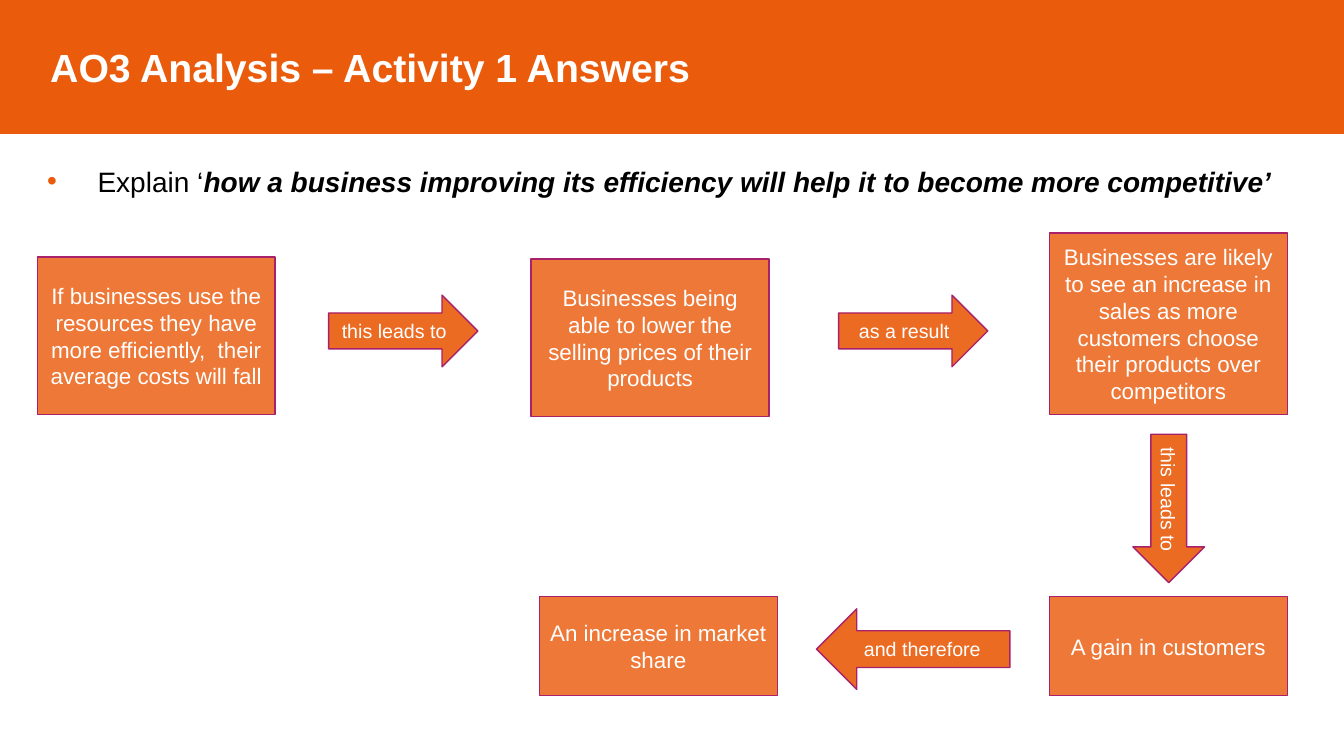
from dataclasses import dataclass

from lxml.etree import SubElement
from pptx import Presentation
from pptx.dml.color import RGBColor
from pptx.enum.shapes import MSO_SHAPE
from pptx.enum.text import MSO_ANCHOR, PP_ALIGN
from pptx.oxml.ns import qn
from pptx.util import Pt

TITLE = "AO3 Analysis – Activity 1 Answers"
QUESTION = [
    ("Explain ‘", False),
    ("how a business improving its efficiency will help it to become more competitive’", True),
]
# text, left, top, height
STEPS = [
    ("If businesses use the resources they have more efficiently,  their average costs will fall",
     26.6, 183.6, 112.4),
    ("Businesses being able to lower the selling prices of their products", 379.4, 185, 112.4),
    ("Businesses are likely to see an increase in sales as more customers choose "
     "their products over competitors", 749.5, 166.4, 129.6),
    ("A gain in customers", 749.5, 426.2, 70.6),
    ("An increase in market share", 385.2, 426.2, 70.6),
]
# text, preset, centre x, centre y, width, height, rotation, adjustments
LINKS = [
    ("this leads to", MSO_SHAPE.RIGHT_ARROW, 288, 236.4, 106.6, 51.2, 0, ()),
    ("as a result", MSO_SHAPE.RIGHT_ARROW, 652.3, 236.4, 106.6, 51.2, 0, ()),
    ("this leads to", MSO_SHAPE.RIGHT_ARROW, 834.8, 363.2, 106, 51.2, 90, ()),
    ("and therefore", MSO_SHAPE.LEFT_ARROW, 652.3, 463.7, 138.2, 57.6, 0, (0.455, 0.5)),
]


@dataclass(frozen=True)
class Theme:
    font: str = "Arial"
    orange: str = "EA5B0C"
    outline: str = "A8216B"
    white: str = "FFFFFF"
    black: str = "000000"
    title_size: int = 28
    question_size: int = 20
    step_size: int = 16
    link_size: int = 14
    step_opacity: int = 82
    link_opacity: int = 90


THEME = Theme()
SLIDE_WIDTH, SLIDE_HEIGHT = 960, 540
STEP_WIDTH = 170


def add_run(paragraph, text, size, color, bold=False, italic=False):
    run = paragraph.add_run()
    run.text = text
    font = run.font
    font.name, font.size = THEME.font, Pt(size)
    font.bold, font.italic = bold, italic
    font.color.rgb = RGBColor.from_string(color)


def set_indent(paragraph, margin, first_line=0):
    properties = paragraph._p.get_or_add_pPr()
    properties.set("marL", str(Pt(margin)))
    properties.set("indent", str(Pt(first_line)))
    return properties


def add_block(slide, preset, box, text, size, line, opacity=100, bold=False,
              align=PP_ALIGN.CENTER):
    """Add an orange shape with one white, vertically centred paragraph."""
    block = slide.shapes.add_shape(preset, *(Pt(length) for length in box))
    block.shadow.inherit = False
    block.fill.solid()
    block.fill.fore_color.rgb = RGBColor.from_string(THEME.orange)
    if opacity < 100:
        color = block.fill._xPr.find(qn("a:solidFill"))[0]
        SubElement(color, qn("a:alpha")).set("val", str(opacity * 1000))
    block.line.color.rgb = RGBColor.from_string(line)
    block.line.width = Pt(1)
    frame = block.text_frame
    frame.word_wrap = True
    frame.vertical_anchor = MSO_ANCHOR.MIDDLE
    paragraph = frame.paragraphs[0]
    paragraph.alignment = align
    add_run(paragraph, text, size, THEME.white, bold)
    return block


def add_question(slide):
    box = slide.shapes.add_textbox(Pt(26.6), Pt(113.8), Pt(933.4), Pt(67.7))
    box.text_frame.word_wrap = True
    paragraph = box.text_frame.paragraphs[0]
    paragraph.space_after = Pt(12)
    properties = set_indent(paragraph, 36, -36)
    bullet_color = SubElement(properties, qn("a:buClr"))
    SubElement(bullet_color, qn("a:srgbClr")).set("val", THEME.orange)
    SubElement(properties, qn("a:buFont")).set("typeface", THEME.font)
    SubElement(properties, qn("a:buChar")).set("char", "•")
    for text, emphasis in QUESTION:
        add_run(paragraph, text, THEME.question_size, THEME.black, emphasis, emphasis)


def main():
    deck = Presentation()
    deck.slide_width, deck.slide_height = Pt(SLIDE_WIDTH), Pt(SLIDE_HEIGHT)
    slide = deck.slides.add_slide(deck.slide_layouts[6])

    banner = add_block(slide, MSO_SHAPE.RECTANGLE, (0, 0, SLIDE_WIDTH, 95), TITLE,
                       THEME.title_size, THEME.orange, bold=True, align=PP_ALIGN.LEFT)
    set_indent(banner.text_frame.paragraphs[0], 28.8)

    for text, left, top, height in STEPS:
        add_block(slide, MSO_SHAPE.RECTANGLE, (left, top, STEP_WIDTH, height), text,
                  THEME.step_size, THEME.outline, THEME.step_opacity)

    for text, preset, x, y, width, height, rotation, adjustments in LINKS:
        arrow = add_block(slide, preset, (x - width / 2, y - height / 2, width, height), text,
                          THEME.link_size, THEME.outline, THEME.link_opacity)
        arrow.rotation = rotation
        for index, value in enumerate(adjustments):
            arrow.adjustments[index] = value

    add_question(slide)
    deck.save("out.pptx")


if __name__ == "__main__":
    main()
